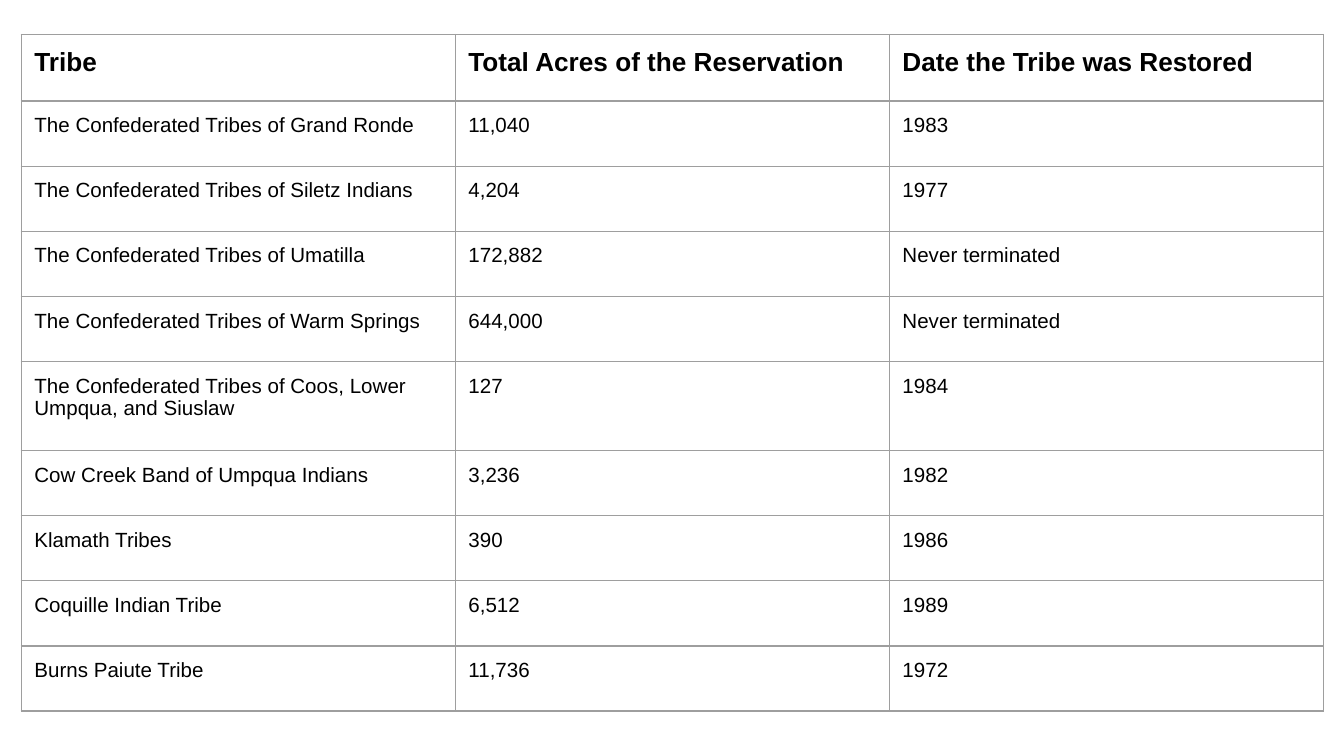
from lxml import etree
from pptx import Presentation
from pptx import util as u
from pptx.dml.color import RGBColor
from pptx.enum import text
from pptx.oxml import ns

HEADER = ("Tribe", "Total Acres of the Reservation", "Date the Tribe was Restored")
TRIBES = [
    ("The Confederated Tribes of Grand Ronde", "11,040", "1983"),
    ("The Confederated Tribes of Siletz Indians", "4,204", "1977"),
    ("The Confederated Tribes of Umatilla", "172,882", "Never terminated"),
    ("The Confederated Tribes of Warm Springs", "644,000", "Never terminated"),
    ("The Confederated Tribes of Coos, Lower Umpqua, and Siuslaw", "127", "1984"),
    ("Cow Creek Band of Umpqua Indians", "3,236", "1982"),
    ("Klamath Tribes", "390", "1986"),
    ("Coquille Indian Tribe", "6,512", "1989"),
    ("Burns Paiute Tribe", "11,736", "1972"),
]
HEADER_HEIGHT, TWO_LINE_HEIGHT = u.Cm(1.26), u.Cm(1.69)
TWO_LINE_ROW = 5
PADDING = u.Cm(0.25)
BORDER = "9E9E9E"


def rgb(value):
    """Return the colour for a hex string."""
    return RGBColor.from_string(value)


def set_borders(cell, color, width):
    """Draw a solid line on all four sides of a cell."""
    tc_pr = cell._tc.get_or_add_tcPr()
    for i, side in enumerate(("lnL", "lnR", "lnT", "lnB")):
        ln = etree.Element(ns.qn(f"a:{side}"), w=str(width))
        fill = etree.SubElement(ln, ns.qn("a:solidFill"))
        etree.SubElement(fill, ns.qn("a:srgbClr"), val=color)
        tc_pr.insert(i, ln)


def fill_cell(cell, content, size, bold):
    """Write and format one table cell."""
    cell.fill.background()
    set_borders(cell, BORDER, u.Pt(0.75))
    cell.margin_left = cell.margin_right = PADDING
    cell.margin_top = cell.margin_bottom = PADDING
    cell.vertical_anchor = text.MSO_ANCHOR.TOP
    p = cell.text_frame.paragraphs[0]
    p.text = content
    p.alignment = text.PP_ALIGN.LEFT
    font = p.runs[0].font
    font.name, font.size, font.bold = "Arial", u.Pt(size), bold
    font.color.rgb = rgb("000000")


def add_tribe_table(s, left, top, width, height):
    """Place the table of tribes within the given box."""
    rows = [HEADER, *TRIBES]
    table = s.shapes.add_table(len(rows), len(HEADER), left, top, width, height).table
    table.first_row = table.horz_banding = False
    for column in table.columns:
        column.width = width // len(HEADER)
    row_height = (height - HEADER_HEIGHT - TWO_LINE_HEIGHT) // (len(rows) - 2)
    heights = {0: HEADER_HEIGHT, TWO_LINE_ROW: TWO_LINE_HEIGHT}
    for i, row in enumerate(rows):
        table.rows[i].height = heights.get(i, row_height)
        for j, content in enumerate(row):
            fill_cell(table.cell(i, j), content, 11 if i else 14, i == 0)


def main():
    """Build and save the presentation."""
    prs = Presentation()
    prs.slide_width, prs.slide_height = u.Cm(25.4), u.Cm(14.29)
    s = prs.slides.add_slide(prs.slide_layouts[6])
    s.background.fill.solid()
    s.background.fill.fore_color.rgb = rgb("FFFFFF")
    add_tribe_table(s, u.Cm(0.4), u.Cm(0.65), u.Cm(24.61), u.Cm(12.79))
    prs.save("out.pptx")


if __name__ == "__main__":
    main()
